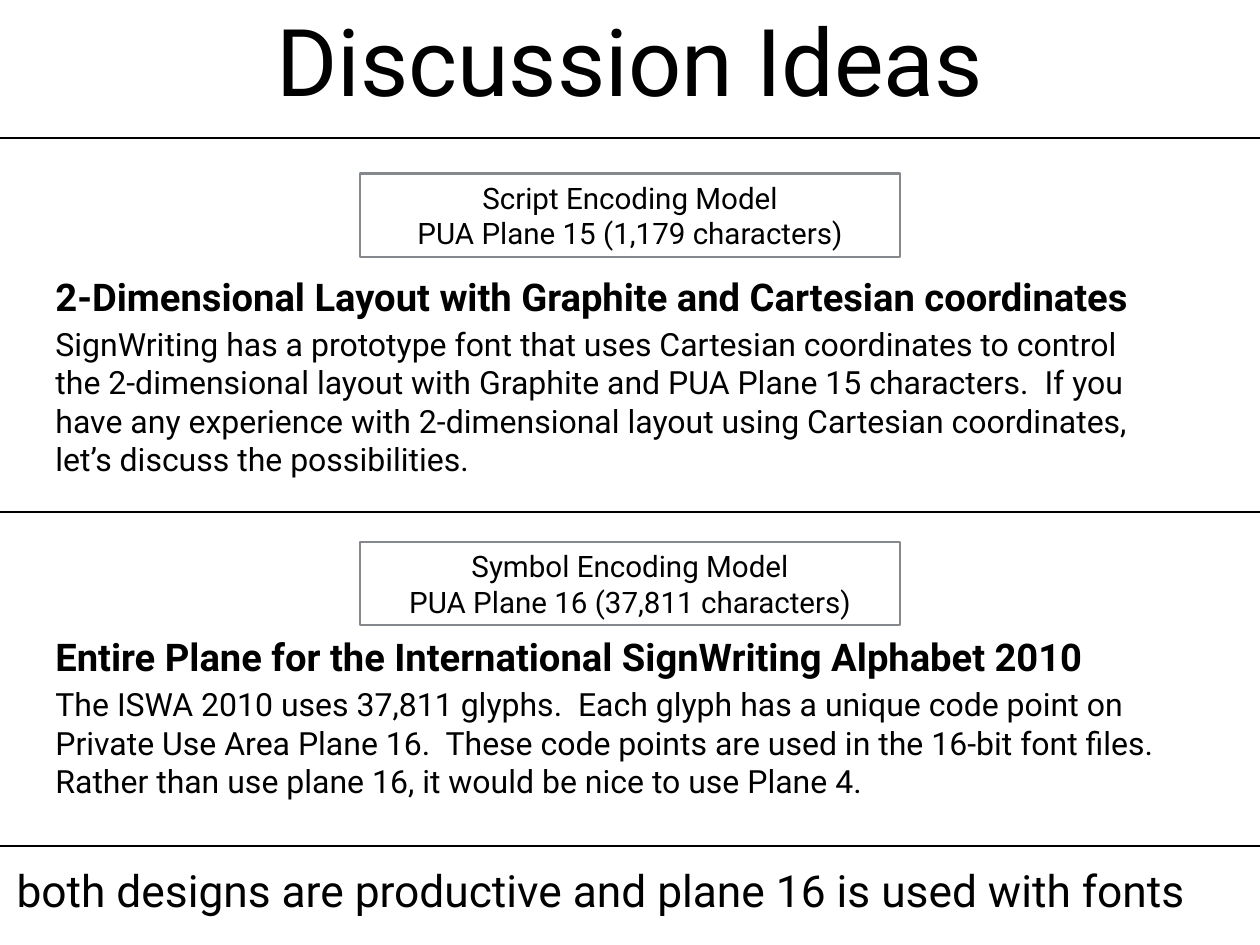
from lxml.etree import SubElement
from pptx import Presentation
from pptx.dml.color import RGBColor
from pptx.enum.shapes import MSO_CONNECTOR as Connector, MSO_SHAPE as Shape
from pptx.enum.text import MSO_ANCHOR as Anchor, MSO_AUTO_SIZE as AutoSize, PP_ALIGN as Align
from pptx.oxml.ns import qn
from pptx.util import Cm, Pt

TITLE = "Discussion Ideas"
FOOTER = "both designs are productive and plane 16 is used with fonts"
IDEAS = [
    {
        "model": ["Script Encoding Model", "PUA Plane 15 (1,179 characters)"],
        "heading": "2-Dimensional Layout with Graphite and Cartesian coordinates",
        "body": "SignWriting has a prototype font that uses Cartesian coordinates to control "
                "the 2-dimensional layout with Graphite and PUA Plane 15 characters.  If you "
                "have any experience with 2-dimensional layout using Cartesian coordinates, "
                "let’s discuss the possibilities.",
        "model_top": 4.98, "heading_top": 7.7, "body_height": 4.65,
    },
    {
        "model": ["Symbol Encoding Model", "PUA Plane 16 (37,811 characters)"],
        "heading": "Entire Plane for the International SignWriting Alphabet 2010",
        "body": "The ISWA 2010 uses 37,811 glyphs.  Each glyph has a unique code point on "
                "Private Use Area Plane 16.  These code points are used in the 16-bit font "
                "files.  Rather than use plane 16, it would be nice to use Plane 4.",
        "model_top": 15.54, "heading_top": 18.03, "body_height": 3.56,
    },
]
RULE_TOPS = [3.96, 14.68, 24.26]
COLORS = {"text": "000000", "rule": "000000", "border": "85888D", "page": "FFFFFF"}
FORMATS = {
    "title": {"size": Pt(76), "bold": False},
    "model": {"size": Pt(24), "bold": False},
    "heading": {"size": Pt(31), "bold": True},
    "body": {"size": Pt(26), "bold": False},
    "footer": {"size": Pt(36), "bold": False},
}
WIDTH, HEIGHT = 36.12, 27.1
TEXT_LEFT, MODEL_WIDTH, BODY_OFFSET, OVERHANG = 1.45, 15.47, 1.47, 0.18
MARGINS = ["margin_left", "margin_top", "margin_right", "margin_bottom"]


def color(name):
    return RGBColor.from_string(COLORS[name])


def write(shape, lines, style, align=Align.LEFT, anchor=Anchor.MIDDLE, wrap=True):
    frame = shape.text_frame
    settings = {"word_wrap": wrap, "auto_size": AutoSize.NONE, "vertical_anchor": anchor}
    settings.update({margin: Cm(0.14) for margin in MARGINS})
    for name, value in settings.items():
        setattr(frame, name, value)
    for index, line in enumerate(lines):
        para = frame.paragraphs[0] if index == 0 else frame.add_paragraph()
        para.alignment = align
        span = para.add_run()
        span.text = line
        for name, value in FORMATS[style].items():
            setattr(span.font, name, value)
        span.font.name = "Roboto"
        span.font.color.rgb = color("text")


def add_text(page, area, text, style, **layout):
    box = page.shapes.add_textbox(*map(Cm, area))
    write(box, [text], style, **layout)


def add_model(page, top, lines):
    left = (WIDTH - MODEL_WIDTH) / 2
    box = page.shapes.add_shape(Shape.RECTANGLE, *map(Cm, (left, top, MODEL_WIDTH, 2.39)))
    box.shadow.inherit = False
    box.fill.background()
    box.line.color.rgb = color("border")
    box.line.width = Pt(2)
    write(box, lines, "model", align=Align.CENTER)


def add_rule(page, top):
    ends = (-OVERHANG, top, WIDTH + OVERHANG, top)
    rule = page.shapes.add_connector(Connector.STRAIGHT, *map(Cm, ends))
    rule.line.color.rgb = color("rule")
    rule.line.width = Pt(2)
    SubElement(rule._element.spPr, qn("a:effectLst"))


def main():
    deck = Presentation()
    deck.slide_width, deck.slide_height = Cm(WIDTH), Cm(HEIGHT)
    page = deck.slides.add_slide(deck.slide_layouts[5])
    page.background.fill.solid()
    page.background.fill.fore_color.rgb = color("page")

    title = page.shapes.title
    title_area = {"left": 1.22, "top": -0.05, "width": 33.66, "height": 3.5}
    for name, value in title_area.items():
        setattr(title, name, Cm(value))
    write(title, [TITLE], "title", align=Align.CENTER)

    for idea in IDEAS:
        top = idea["heading_top"]
        add_model(page, idea["model_top"], idea["model"])
        add_text(page, (TEXT_LEFT, top, 33.22, 1.6), idea["heading"], "heading")
        body_area = (TEXT_LEFT, top + BODY_OFFSET, 32.11, idea["body_height"])
        add_text(page, body_area, idea["body"], "body", anchor=Anchor.TOP)

    add_text(page, (0.36, 24.61, 33.73, 1.8), FOOTER, "footer", align=Align.CENTER, wrap=False)
    for top in RULE_TOPS:
        add_rule(page, top)
    deck.save("out.pptx")


if __name__ == "__main__":
    main()
